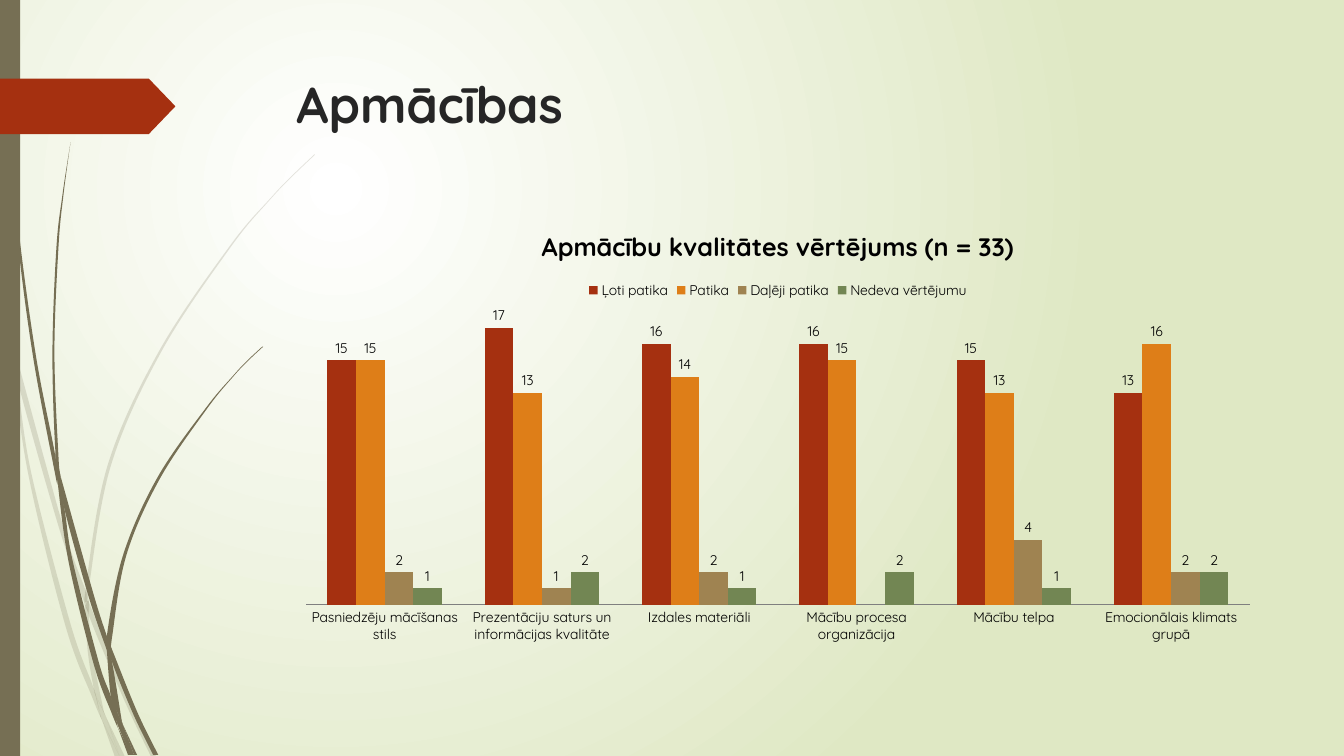
from lxml.etree import SubElement
from pptx import Presentation
from pptx.chart.data import CategoryChartData
from pptx.dml.color import RGBColor
from pptx.enum.chart import XL_CHART_TYPE, XL_LABEL_POSITION, XL_LEGEND_POSITION, XL_TICK_MARK
from pptx.enum.shapes import MSO_SHAPE
from pptx.enum.text import MSO_ANCHOR, PP_ALIGN
from pptx.oxml.ns import qn
from pptx.util import Inches, Pt

# Content
TITLE = "Apmācības"
CHART_TITLE = "Apmācību kvalitātes vērtējums (n = 33)"
CATEGORIES = [
    "Pasniedzēju mācīšanas stils", "Prezentāciju saturs un informācijas kvalitāte",
    "Izdales materiāli", "Mācību procesa organizācija",
    "Mācību telpa", "Emocionālais klimats grupā",
]
SERIES = [
    ("Ļoti patika", "red", (15, 17, 16, 16, 15, 13)),
    ("Patika", "orange", (15, 13, 14, 15, 13, 16)),
    ("Daļēji patika", "tan", (2, 1, 2, None, 4, 2)),
    ("Nedeva vērtējumu", "green", (1, 2, 1, 2, 1, 2)),
]
COLORS = {
    "red": "A53010", "orange": "DE7E18", "tan": "9F8351", "green": "728653",
    "stem": "766F54", "title": "262626", "text": "000000", "axis": "7F7F7F",
    "glow": "FFFFFF", "ground": "DFE8C4",
}
FONT = "Quicksand"
WIDTH, HEIGHT = 13.33, 7.5
LEFT, CONTENT_W = 2.84, 9.75

# Grass pieces in inches: one edge going down, the other edge going back up
PALE_GRASS = [
    ([(0, 2.99), (.1, 3.44), (.11, 3.5)], [(.11, 3.5), (.09, 3.22), (0, 2.82)]),
    ([(.14, 3.45), (.17, 3.76), (.58, 5.22), (.84, 5.99)],
     [(.85, 5.86), (.62, 5.2), (.14, 3.45)]),
    ([(.88, 5.96), (.88, 6.1), (1.23, 6.94), (1.5, 7.51)],
     [(1.55, 7.51), (1.27, 6.92), (.92, 6.07), (.88, 5.96)]),
    ([(1.05, 7.11), (1.19, 7.51)], [(1.24, 7.51), (1.05, 7.11)]),
    ([(.11, 3.5), (.28, 4.7), (.65, 6.21), (.92, 6.93), (1.01, 7.14)],
     [(.99, 7.07), (.93, 6.83), (.7, 6.19), (.31, 4.69), (.17, 3.76), (.11, 3.5)]),
    ([(.84, 5.99), (.87, 6.46), (.93, 6.83), (.96, 6.92), (1.05, 7.11)],
     [(1.03, 7.06), (.91, 6.46), (.88, 6.1), (.84, 5.99)]),
    ([(3.12, 1.53), (2.89, 1.75), (2.68, 1.97), (2.28, 2.44), (1.58, 3.48),
      (1.07, 4.61), (.85, 5.84), (.88, 5.96)],
     [(.88, 5.96), (.88, 5.84), (1.1, 4.62), (1.6, 3.49), (2.29, 2.45),
      (2.68, 1.98), (2.9, 1.75), (3.12, 1.54)]),
    ([(1.01, 7.14), (1.14, 7.51)], [(1.19, 7.51), (1.01, 7.14)]),
    ([(.85, 5.86), (.84, 5.99), (.88, 6.08)], [(.88, 6.1), (.88, 5.96), (.85, 5.86)]),
    ([(.93, 6.83), (.99, 7.07), (1.01, 7.14), (1.19, 7.51)],
     [(1.19, 7.51), (1.05, 7.11), (.96, 6.92), (.93, 6.83)]),
]
DARK_GRASS = [
    ([(.03, 0), (.04, .48), (.07, 1.1), (.17, 2.33), (.33, 3.55), (.56, 4.77)],
     [(.57, 4.81), (.55, 4.53), (.36, 3.55), (.19, 2.32), (.08, 1.09), (.05, .48), (.04, 0)]),
    ([(.6, 4.72), (.64, 5.05), (.88, 5.92), (1.06, 6.45)],
     [(1.06, 6.31), (.93, 5.9), (.6, 4.72)]),
    ([(1.1, 6.41), (1.11, 6.56), (1.32, 7.08), (1.52, 7.49)],
     [(1.57, 7.49), (1.36, 7.06), (1.13, 6.49), (1.1, 6.41)]),
    ([(.57, 4.77), (.68, 5.57), (.93, 6.59), (1.11, 7.08), (1.17, 7.22)],
     [(1.16, 7.17), (1.1, 6.91), (.98, 6.57), (.72, 5.56), (.64, 5.05), (.57, 4.77)]),
    ([(.7, 1.41), (.62, 1.93), (.56, 2.45), (.52, 3.49), (.55, 4.49), (.6, 4.72)],
     [(.6, 4.72), (.58, 4.53), (.54, 3.49), (.58, 2.45), (.63, 1.93), (.7, 1.41)]),
    ([(1.22, 7.19), (1.33, 7.49)], [(1.36, 7.49), (1.22, 7.19)]),
    ([(.55, 4.49), (.55, 4.53), (.57, 4.77), (.64, 5.05)], [(.6, 4.72), (.55, 4.49)]),
    ([(2.6, 3.44), (2.45, 3.58), (2.31, 3.73), (2.04, 4.05), (1.56, 4.74),
      (1.22, 5.51), (1.06, 6.31), (1.1, 6.41)],
     [(1.11, 6.33), (1.25, 5.52), (1.58, 4.76), (2.05, 4.06), (2.31, 3.74),
      (2.45, 3.59), (2.61, 3.44)]),
    ([(1.17, 7.22), (1.27, 7.49)], [(1.31, 7.49), (1.17, 7.22)]),
    ([(1.06, 6.45), (1.1, 6.91), (1.16, 7.06), (1.22, 7.19)],
     [(1.21, 7.16), (1.11, 6.56), (1.06, 6.45)]),
    ([(1.06, 6.31), (1.06, 6.45), (1.11, 6.56)], [(1.1, 6.41), (1.06, 6.31)]),
    ([(1.1, 6.91), (1.16, 7.17), (1.3, 7.49)],
     [(1.33, 7.49), (1.22, 7.19), (1.16, 7.06), (1.1, 6.91)]),
]


def rgb(name):
    return RGBColor.from_string(COLORS[name])


def paint(sp, name, alpha=None):
    sp.shadow.inherit = False
    sp.fill.solid()
    sp.fill.fore_color.rgb = rgb(name)
    sp.line.fill.background()
    if alpha is not None:
        clr = sp._element.spPr.find(".//" + qn("a:srgbClr"))
        SubElement(clr, qn("a:alpha"), val=str(alpha * 1000))


def add_grass(shapes, down, up, alpha=None):
    knots = [(round(x * 1000), round(y * 1000)) for x, y in down + up]
    fb = shapes.build_freeform(*knots[0], scale=Inches(1) / 1000)
    fb.add_line_segments(knots[1:], close=True)
    sp = fb.convert_to_shape()
    lines = sp._element.findall(".//" + qn("a:lnTo"))
    pts = [(int(pt.get("x")), int(pt.get("y"))) for pt in sp._element.iter(qn("a:pt"))]
    # Bend each edge into Bezier curves through its knots
    for first, last in ((0, len(down) - 1), (len(down), len(pts) - 1)):
        for i in range(first, last):
            a, b, c, d = (pts[min(max(k, first), last)] for k in range(i - 1, i + 3))
            end = lines[i][0]
            lines[i].tag = qn("a:cubicBezTo")
            for base, p, q in ((b, a, c), (c, d, b)):
                x, y = (round(m + (w - v) / 6) for m, v, w in zip(base, p, q))
                SubElement(lines[i], qn("a:pt"), x=str(x), y=str(y))
            lines[i].append(end)
    paint(sp, "stem", alpha)


def style_font(font, size, name="text", bold=False):
    font.name, font.size, font.bold = FONT, Pt(size), bold
    font.color.rgb = rgb(name)


def add_background(slide):
    fill = slide.background.fill
    fill.gradient()
    for stop, name, pos in zip(fill.gradient_stops, ("glow", "ground"), (0, 1)):
        stop.color.rgb = rgb(name)
        stop.position = pos
    grad = slide._element.find(".//" + qn("a:gradFill"))
    grad.remove(grad.find(qn("a:lin")))
    circle = SubElement(grad, qn("a:path"), path="circle")
    SubElement(circle, qn("a:fillToRect"), l="50000", t="50000", r="100000", b="100000")


def add_rating_chart(shapes):
    data = CategoryChartData()
    data.categories = CATEGORIES
    for name, _, values in SERIES:
        data.add_series(name, values)
    chart = shapes.add_chart(XL_CHART_TYPE.COLUMN_CLUSTERED, Inches(LEFT), Inches(2.08),
                             Inches(CONTENT_W), Inches(4.38), data).chart
    style_font(chart.font, 10)
    r = chart.chart_title.text_frame.paragraphs[0].add_run()
    r.text = CHART_TITLE
    style_font(r.font, 18, bold=True)
    chart.has_legend = True
    chart.legend.position = XL_LEGEND_POSITION.TOP
    chart.legend.include_in_layout = False
    cat, val = chart.category_axis, chart.value_axis
    cat.major_tick_mark = XL_TICK_MARK.NONE
    cat.format.line.color.rgb = rgb("axis")
    val.visible = val.has_major_gridlines = False
    val.minimum_scale, val.maximum_scale = 0, 18
    plot = chart.plots[0]
    plot.gap_width, plot.overlap, plot.vary_by_categories = 150, 0, False
    for series, (_, color, _) in zip(plot.series, SERIES):
        series.format.fill.solid()
        series.format.fill.fore_color.rgb = rgb(color)
        labels = series.data_labels
        labels.show_value = True
        labels.position = XL_LABEL_POSITION.OUTSIDE_END
        style_font(labels.font, 10)


# Slide
prs = Presentation()
prs.slide_width, prs.slide_height = Inches(WIDTH), Inches(HEIGHT)
slide = prs.slides.add_slide(prs.slide_layouts[5])
shapes = slide.shapes
add_background(slide)
for pieces, alpha in ((PALE_GRASS, 20), (DARK_GRASS, None)):
    for down, up in pieces:
        add_grass(shapes, down, up, alpha)
paint(shapes.add_shape(MSO_SHAPE.RECTANGLE, 0, 0, Inches(0.2), Inches(HEIGHT)), "stem")
tab = shapes.add_shape(MSO_SHAPE.PENTAGON, 0, Inches(0.78), Inches(1.74), Inches(0.55))
tab.adjustments[0] = 0.48
paint(tab, "red")

# Title and chart
title = shapes.title
title.left, title.top = Inches(LEFT), Inches(0.68)
title.width, title.height = Inches(CONTENT_W), Inches(1.4)
title.text_frame.vertical_anchor = MSO_ANCHOR.TOP
p = title.text_frame.paragraphs[0]
p.alignment = PP_ALIGN.LEFT
r = p.add_run()
r.text = TITLE
style_font(r.font, 36, "title", bold=True)
add_rating_chart(shapes)
prs.save("out.pptx")
